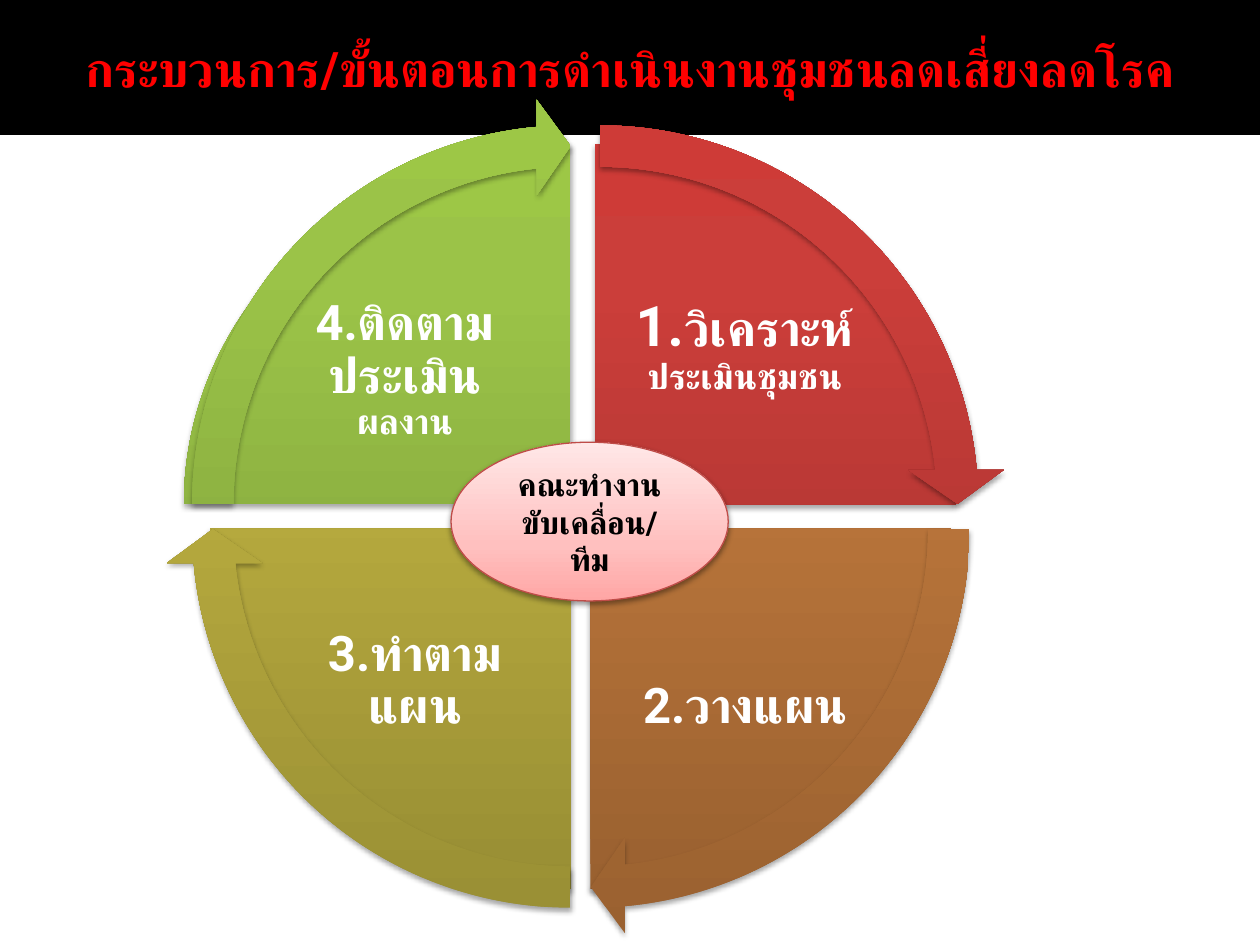
from copy import deepcopy
from dataclasses import dataclass

from lxml.etree import SubElement
from pptx import Presentation
from pptx.dml.color import RGBColor
from pptx.enum.shapes import MSO_SHAPE
from pptx.enum.text import MSO_ANCHOR, MSO_AUTO_SIZE, PP_ALIGN
from pptx.oxml.ns import qn
from pptx.util import Inches, Pt


@dataclass(frozen=True)
class Theme:
    font: str = "Roboto"
    banner: str = "000000"
    title: str = "FF0000"
    light: str = "FFFFFF"
    dark: str = "000000"
    rim: str = "BF4C48"
    red: tuple = ((0, "9C2F2D"), (0.8, "CB3E3A"), (1, "CE3B37"))
    brown: tuple = ((0, "9A6130"), (0.8, "C87E3F"), (1, "CC7E3C"))
    olive: tuple = ((0, "988E34"), (0.8, "C6B843"), (1, "C9BB41"))
    green: tuple = ((0, "779737"), (0.8, "9BC348"), (1, "9DC746"))
    pink: tuple = ((0, "FFA6A5"), (0.35, "FFC0BF"), (1, "FFE7E7"))
    number: int = 32
    heading: int = 28
    detail: int = 20
    hub: int = 18


THEME = Theme()
QUARTER = 54
FULL_TURN = 4 * QUARTER
HEAD_ANGLE = 3.275
BAND, HEAD_WIDTH = 0.051, 0.059

STEPS = [
    dict(colors=THEME.red, start=162, pie=(1.86, 1.14, 5.73, 5.73),
         arrow=(1.54, 0.78), label=(4.9, 2.33, 2.02, 1.57),
         anchor=MSO_ANCHOR.TOP,
         lines=[[("1.", THEME.number), ("วิเคราะห์ ", THEME.heading),
                 ("ประเมินชุมชน", THEME.detail)]]),
    dict(colors=THEME.brown, start=0, pie=(1.82, 1.33, 5.73, 5.73),
         arrow=(1.47, 0.98), label=(4.86, 4.3, 2.11, 1.57),
         anchor=MSO_ANCHOR.BOTTOM, lines=[[("2.วางแผน", THEME.heading)]]),
    dict(colors=THEME.olive, start=54, pie=(1.67, 1.33, 5.73, 5.73),
         arrow=(1.31, 0.98), label=(2.24, 4.3, 2.11, 1.57),
         anchor=MSO_ANCHOR.BOTTOM, lines=[[("3.ทำตามแผน", THEME.heading)]]),
    dict(colors=THEME.green, start=108, pie=(1.46, 1.15, 6.14, 5.7),
         arrow=(1.31, 0.78), label=(2.08, 2.33, 2.27, 1.56),
         anchor=MSO_ANCHOR.TOP,
         lines=[[("4.ติดตามประเมิน", THEME.heading)],
                [("ผลงาน", THEME.detail)]]),
]


def apply_format(target, values):
    for name, value in values.items():
        setattr(target, name, value)


def inches(box):
    return [Inches(length) for length in box]


def write_lines(frame, lines, color, anchor, spacing=1.0, inset=None):
    apply_format(frame, dict(word_wrap=True, auto_size=MSO_AUTO_SIZE.NONE,
                             vertical_anchor=anchor))
    if inset is not None:
        sides = ("left", "top", "right", "bottom")
        apply_format(frame, {f"margin_{side}": Inches(inset) for side in sides})
    for index, line in enumerate(lines):
        paragraph = frame.add_paragraph() if index else frame.paragraphs[0]
        apply_format(paragraph, dict(alignment=PP_ALIGN.CENTER,
                                     line_spacing=spacing))
        for words, size in line:
            run = paragraph.add_run()
            run.text = words
            apply_format(run.font, dict(name=THEME.font, size=Pt(size), bold=True))
            run.font.color.rgb = RGBColor.from_string(color)


def fill_gradient(shape, colors):
    fill = shape.fill
    fill.gradient()
    fill.gradient_angle = 90
    stop_list = shape._element.spPr.find(qn("a:gradFill")).find(qn("a:gsLst"))
    stop_list.append(deepcopy(stop_list[-1]))
    for stop, (position, color) in zip(fill.gradient_stops, colors):
        stop.position = position
        stop.color.rgb = RGBColor.from_string(color)


def cast_shadow(shape, opacity, distance):
    shape.shadow.inherit = False
    effects = shape._element.spPr.find(qn("a:effectLst"))
    shadow = SubElement(effects, qn("a:outerShdw"), blurRad=str(Pt(3.1)),
                        dist=str(Pt(distance)), dir="5400000", rotWithShape="0")
    color = SubElement(shadow, qn("a:srgbClr"), val="000000")
    SubElement(color, qn("a:alpha"), val=str(opacity * 1000))


def add_raised_shape(slide, preset, box, colors, adjustments=(),
                     opacity=35, distance=1.8):
    shape = slide.shapes.add_shape(preset, *inches(box))
    for index, value in enumerate(adjustments):
        shape.adjustments[index] = value
    fill_gradient(shape, colors)
    shape.line.fill.background()
    cast_shadow(shape, opacity, distance)
    return shape


def add_title(slide, words):
    title = slide.shapes.title
    left, top, width, height = inches((0, 0, 10, 1.07))
    apply_format(title, dict(left=left, top=top, width=width, height=height))
    title.fill.solid()
    title.fill.fore_color.rgb = RGBColor.from_string(THEME.banner)
    write_lines(title.text_frame, [[(words, THEME.heading)]],
                THEME.title, MSO_ANCHOR.MIDDLE)


def add_sector(slide, step):
    start = step["start"]
    add_raised_shape(slide, MSO_SHAPE.PIE, step["pie"], step["colors"],
                     (start, (start + QUARTER) % FULL_TURN))
    label = slide.shapes.add_textbox(*inches(step["label"]))
    write_lines(label.text_frame, step["lines"], THEME.light,
                step["anchor"], spacing=0.9, inset=0.04)


def add_cycle_arrow(slide, step):
    start = step["start"]
    tip = start + QUARTER - HEAD_ANGLE
    add_raised_shape(slide, MSO_SHAPE.CIRCULAR_ARROW,
                     (*step["arrow"], 6.44, 6.44), step["colors"],
                     (BAND, HEAD_ANGLE, tip, start, HEAD_WIDTH))


def add_hub(slide, words):
    hub = add_raised_shape(slide, MSO_SHAPE.OVAL, (3.58, 3.51, 2.2, 1.26),
                           THEME.pink, opacity=38, distance=1.6)
    hub.line.color.rgb = RGBColor.from_string(THEME.rim)
    hub.line.width = Pt(0.75)
    write_lines(hub.text_frame, [[(words, THEME.hub)]],
                THEME.dark, MSO_ANCHOR.MIDDLE)


def main():
    presentation = Presentation()
    apply_format(presentation, dict(slide_width=Inches(10),
                                    slide_height=Inches(7.5)))
    slide = presentation.slides.add_slide(presentation.slide_layouts[5])
    add_title(slide, "กระบวนการ/ขั้นตอนการดำเนินงานชุมชนลดเสี่ยงลดโรค")
    for step in STEPS:
        add_sector(slide, step)
    for step in STEPS:
        add_cycle_arrow(slide, step)
    add_hub(slide, "คณะทำงานขับเคลื่อน/ทีม")
    presentation.save("out.pptx")


if __name__ == "__main__":
    main()
